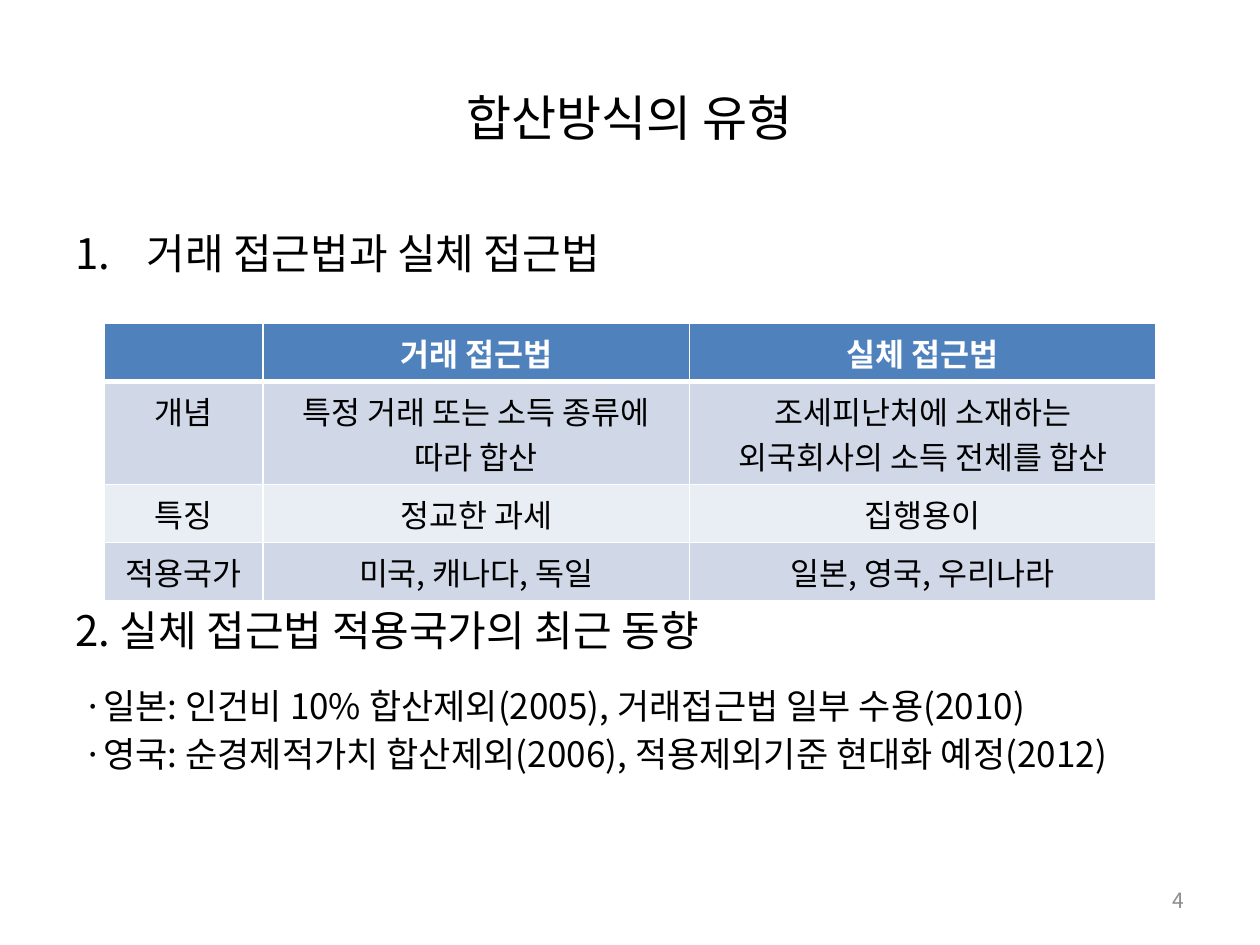
import pptx
import pptx.dml.color
import pptx.enum.text
import pptx.oxml.ns
import pptx.util
from lxml import etree

Cm = pptx.util.Cm
Pt = pptx.util.Pt
ALIGN = pptx.enum.text.PP_ALIGN
ANCHOR = pptx.enum.text.MSO_ANCHOR
FONT = "Noto Sans CJK KR"
COLORS = {
    "text": "000000",
    "header": "4F81BD",
    "header_text": "FFFFFF",
    "rule": "FFFFFF",
    "band_dark": "D0D8E8",
    "band_light": "E9EDF4",
    "page_number": "8C8C8C",
}
APPROACHES = [
    ["", "거래 접근법", "실체 접근법"],
    ["개념", "특정 거래 또는 소득 종류에 따라 합산", "조세피난처에 소재하는 외국회사의 소득 전체를 합산"],
    ["특징", "정교한 과세", "집행용이"],
    ["적용국가", "미국, 캐나다, 독일", "일본, 영국, 우리나라"],
]
COLUMN_WIDTHS = [3.2, 8.6, 9.4]
ROW_HEIGHTS = [1.17, 2.08, 1.17, 1.17]
# text, size, space before in points, first-line offset in cm, numbered
OUTLINE = [
    ("거래 접근법과 실체 접근법", 24, 0, 0, True),
    ("2. 실체 접근법 적용국가의 최근 동향", 24, 187, 0, False),
    ("·일본: 인건비 10% 합산제외(2005), 거래접근법 일부 수용(2010)", 20, 17, 0.16, False),
    ("·영국: 순경제적가치 합산제외(2006), 적용제외기준 현대화 예정(2012)", 20, 3, 0.16, False),
]
HANGING = 1.43


def rgb(name):
    return pptx.dml.color.RGBColor.from_string(COLORS[name])


def add_child(parent, tag, **attributes):
    return etree.SubElement(parent, pptx.oxml.ns.qn(tag), attributes)


def style(paragraph, size, color="text", bold=False, align=None):
    """Format a paragraph, with the same face for Latin and Korean letters."""
    paragraph.alignment = align
    font = paragraph.font
    font.name, font.size, font.bold = FONT, Pt(size), bold
    font.color.rgb = rgb(color)
    latin = paragraph._p.pPr.find(".//" + pptx.oxml.ns.qn("a:latin"))
    add_child(latin.getparent(), "a:ea", typeface=FONT)


def place(shape, left, top, width, height):
    shape.left, shape.top = Cm(left), Cm(top)
    shape.width, shape.height = Cm(width), Cm(height)


def fill_title(title):
    place(title, 1.27, 0.76, 22.86, 3.18)
    title.text_frame.text = "합산방식의 유형"
    title.text_frame.auto_size = pptx.enum.text.MSO_AUTO_SIZE.NONE
    title.text_frame.vertical_anchor = ANCHOR.MIDDLE
    style(title.text_frame.paragraphs[0], 28, align=ALIGN.CENTER)


def fill_outline(body):
    place(body, 1.27, 4.45, 22.86, 12.88)
    frame = body.text_frame
    frame.auto_size = pptx.enum.text.MSO_AUTO_SIZE.NONE
    frame.text = "\n".join(item[0] for item in OUTLINE)
    for paragraph, item in zip(frame.paragraphs, OUTLINE):
        _, size, before, offset, numbered = item
        paragraph.line_spacing = 1.0
        paragraph.space_before = Pt(before)
        properties = paragraph._p.get_or_add_pPr()
        properties.set("marL", str(Cm(HANGING)))
        properties.set("indent", str(Cm(offset - HANGING)))
        if numbered:
            add_child(properties, "a:buFont", typeface="+mj-lt")
            add_child(properties, "a:buAutoNum", type="arabicPeriod")
        else:
            add_child(properties, "a:buNone")
        style(paragraph, size)


def add_bottom_rule(cell, width):
    properties = cell._tc.get_or_add_tcPr()
    rule = add_child(properties, "a:lnB", w=str(Pt(width)))
    add_child(add_child(rule, "a:solidFill"), "a:srgbClr", val=COLORS["rule"])
    properties.insert(0, rule)


def add_approach_table(slide):
    table = slide.shapes.add_table(
        len(APPROACHES), len(COLUMN_WIDTHS), Cm(2.1), Cm(6.52),
        Cm(sum(COLUMN_WIDTHS)), Cm(sum(ROW_HEIGHTS))).table
    for column, width in zip(table.columns, COLUMN_WIDTHS):
        column.width = Cm(width)
    for index, (row, height, texts) in enumerate(zip(table.rows, ROW_HEIGHTS, APPROACHES)):
        row.height = Cm(height)
        is_header = index == 0
        band = "header" if is_header else "band_dark" if index % 2 else "band_light"
        for cell, text in zip(row.cells, texts):
            cell.fill.solid()
            cell.fill.fore_color.rgb = rgb(band)
            cell.text = text
            style(cell.text_frame.paragraphs[0], 18,
                  "header_text" if is_header else "text", is_header, ALIGN.CENTER)
            if is_header:
                add_bottom_rule(cell, 3)


def add_page_number(slide):
    box = slide.shapes.add_textbox(Cm(18.2), Cm(17.65), Cm(5.93), Cm(1.01))
    frame = box.text_frame
    frame.word_wrap = True
    frame.vertical_anchor = ANCHOR.MIDDLE
    frame.text = "4"
    style(frame.paragraphs[0], 12, "page_number", align=ALIGN.RIGHT)


def main():
    deck = pptx.Presentation()
    deck.slide_width, deck.slide_height = Cm(25.4), Cm(19.05)
    slide = deck.slides.add_slide(deck.slide_layouts[1])
    fill_title(slide.shapes.title)
    fill_outline(slide.placeholders[1])
    add_page_number(slide)
    add_approach_table(slide)
    deck.save("out.pptx")


if __name__ == "__main__":
    main()
